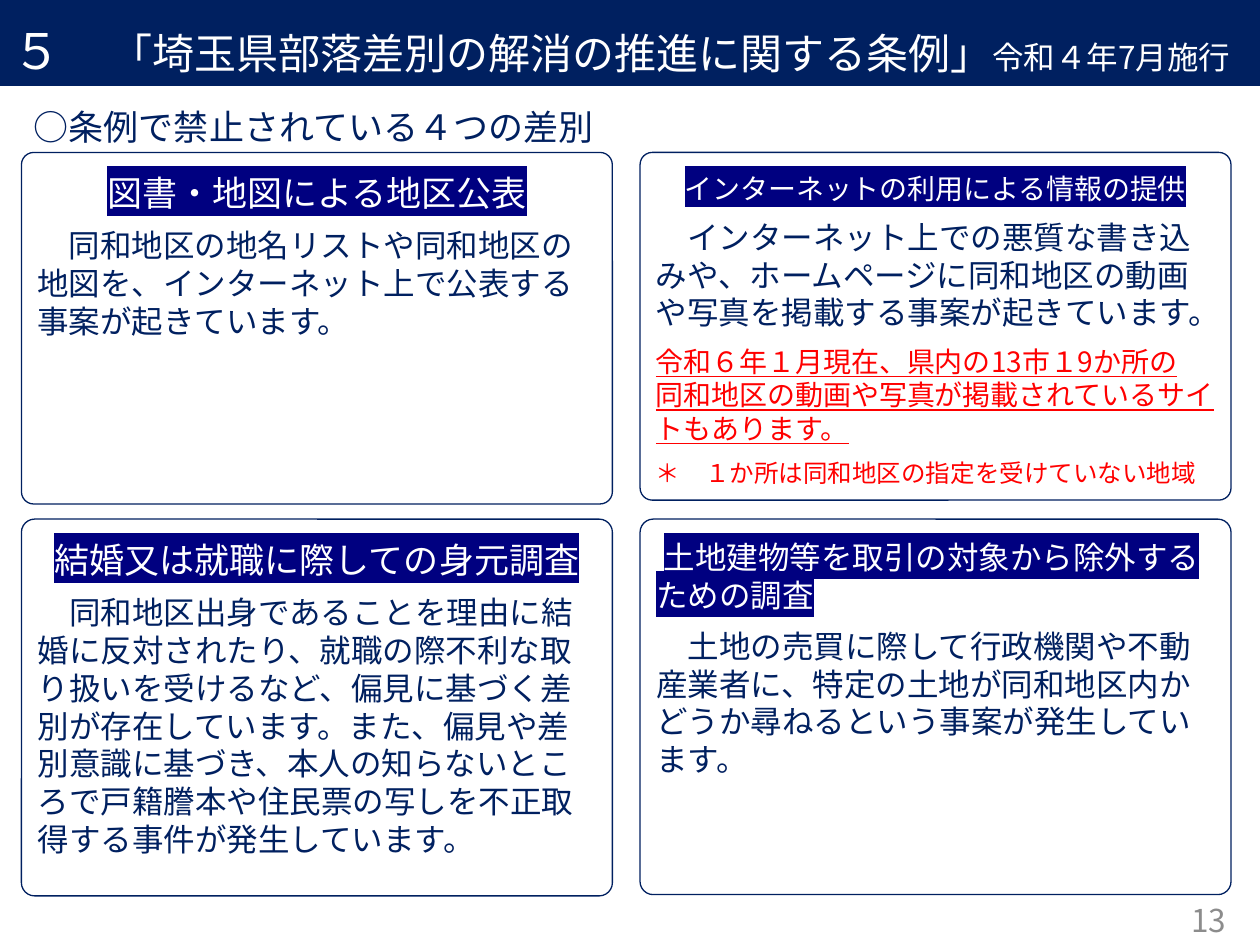
from lxml.etree import SubElement
from pptx import Presentation
from pptx.dml.color import RGBColor
from pptx.enum.lang import MSO_LANGUAGE_ID as Language
from pptx.enum.shapes import MSO_SHAPE as Shape
from pptx.enum.text import MSO_ANCHOR as Anchor, MSO_AUTO_SIZE as AutoSize, PP_ALIGN as Align
from pptx.oxml.ns import qn
from pptx.util import Inches, Pt

NAVY, WHITE, RED, GRAY, MARKER = "002060", "FFFFFF", "FF0000", "8C8C8C", "000080"
FONT = "Noto Sans CJK JP"

HEADER = [
    ("５　", 28),
    ("「埼玉県部落差別の解消の推進に関する条例」", 24),
    ("令和４年7月施行", 18),
]
SUBTITLE = "○条例で禁止されている４つの差別"
PAGE_NUMBER = "13"

STYLES = {
    "heading": dict(size=20, color=WHITE, marker=MARKER, align=Align.CENTER),
    "small heading": dict(size=16, color=WHITE, marker=MARKER, align=Align.CENTER),
    "long heading": dict(size=18, color=WHITE, marker=MARKER, indent=0.06),
    "body": dict(size=18, color=NAVY),
    "alert": dict(size=16, color=RED, underline=True),
    "note": dict(size=14, color=RED, font="Calibri"),
}
CARDS = [
    (0, 0, 2.79, [
        ("heading", "図書・地図による地区公表"),
        ("body", "　同和地区の地名リストや同和地区の地図を、インターネット上で公表する事案が起きています。"),
    ]),
    (1, 0, 2.76, [
        ("small heading", "インターネットの利用による情報の提供"),
        ("body", "　インターネット上での悪質な書き込みや、ホームページに同和地区の動画や写真を掲載する事案が起きています。"),
        ("alert", "令和６年１月現在、県内の13市１9か所の\v同和地区の動画や写真が掲載されているサイトもあります。"),
        ("note", "＊　１か所は同和地区の指定を受けていない地域"),
    ]),
    (0, 1, 2.99, [
        ("heading", "結婚又は就職に際しての身元調査"),
        ("body", "　同和地区出身であることを理由に結婚に反対されたり、就職の際不利な取り扱いを受けるなど、"
                 "偏見に基づく差別が存在しています。また、偏見や差別意識に基づき、"
                 "本人の知らないところで戸籍謄本や住民票の写しを不正取得する事件が発生しています。"),
    ]),
    (1, 1, 2.98, [
        ("long heading", "土地建物等を取引の対象から除外する\vための調査"),
        ("body", "　土地の売買に際して行政機関や不動産業者に、特定の土地が同和地区内かどうか尋ねるという事案が発生しています。"),
    ]),
]
CARD_LEFT, CARD_TOP, CARD_WIDTH = 0.17, 1.21, 4.69
COLUMN_STEP, ROW_STEP = 4.91, 2.91


def rgb(value):
    return RGBColor.from_string(value)


def format_run(run, size, color, font=FONT, marker=None, underline=None):
    run.font.size = Pt(size)
    run.font.name = font
    run.font.language_id = Language.JAPANESE
    run.font.color.rgb = rgb(color)
    run.font.underline = underline
    properties = run.font._element
    east_asian = SubElement(properties, qn("a:ea"))
    east_asian.set("typeface", FONT)
    if marker:
        highlight = SubElement(properties, qn("a:highlight"))
        SubElement(highlight, qn("a:srgbClr")).set("val", marker)
        properties.find(qn("a:solidFill")).addnext(highlight)


def fill_paragraph(paragraph, text, align=Align.LEFT, indent=0, spacing=None, **style):
    paragraph.text = text
    paragraph.alignment = align
    paragraph.line_spacing = spacing
    if indent:
        paragraph._p.get_or_add_pPr().set("indent", str(Inches(indent)))
    for run in paragraph.runs:
        format_run(run, **style)


def place(shape, left, top, width, height):
    shape.left, shape.top = Inches(left), Inches(top)
    shape.width, shape.height = Inches(width), Inches(height)


def prepare_frame(shape, inset_top=0.05, anchor=Anchor.TOP):
    frame = shape.text_frame
    frame.word_wrap = True
    frame.auto_size = AutoSize.NONE
    frame.vertical_anchor = anchor
    frame.margin_top = Inches(inset_top)
    return frame


def add_header(slide):
    title = slide.shapes.title
    place(title, 0, 0, 10, 0.68)
    title.fill.solid()
    title.fill.fore_color.rgb = rgb(NAVY)
    title.line.color.rgb = rgb(NAVY)
    title.line.width = Pt(1)
    paragraph = prepare_frame(title, 0.16).paragraphs[0]
    paragraph.alignment = Align.LEFT
    for text, size in HEADER:
        run = paragraph.add_run()
        run.text = text
        format_run(run, size, WHITE)


def add_card(slide, column, row, height, paragraphs):
    card = slide.shapes.add_shape(Shape.ROUNDED_RECTANGLE, 0, 0, 0, 0)
    place(card, CARD_LEFT + column * COLUMN_STEP, CARD_TOP + row * ROW_STEP, CARD_WIDTH, height)
    card.adjustments[0] = 0.035
    card.shadow.inherit = False
    card.fill.background()
    card.line.color.rgb = rgb(NAVY)
    card.line.width = Pt(0.75)
    frame = prepare_frame(card, 0.12)
    for index, (style, text) in enumerate(paragraphs):
        paragraph = frame.add_paragraph() if index else frame.paragraphs[0]
        fill_paragraph(paragraph, text, **STYLES[style])
        if index:
            paragraph.space_before = Pt(7.5)


def add_label(slide, text, box, anchor=Anchor.TOP, **style):
    label = slide.shapes.add_textbox(*map(Inches, box))
    fill_paragraph(prepare_frame(label, anchor=anchor).paragraphs[0], text, **style)


def main():
    presentation = Presentation()
    presentation.slide_width, presentation.slide_height = Inches(10), Inches(7.5)
    slide = presentation.slides.add_slide(presentation.slide_layouts[5])
    add_header(slide)
    add_label(slide, SUBTITLE, (0.17, 0.62, 6.96, 0.56), size=20, color=NAVY, spacing=1.5)
    for card in CARDS:
        add_card(slide, *card)
    add_label(slide, PAGE_NUMBER, (7.58, 7.1, 2.25, 0.4), Anchor.MIDDLE,
              size=18, color=GRAY, align=Align.RIGHT)
    presentation.save("out.pptx")


if __name__ == "__main__":
    main()
